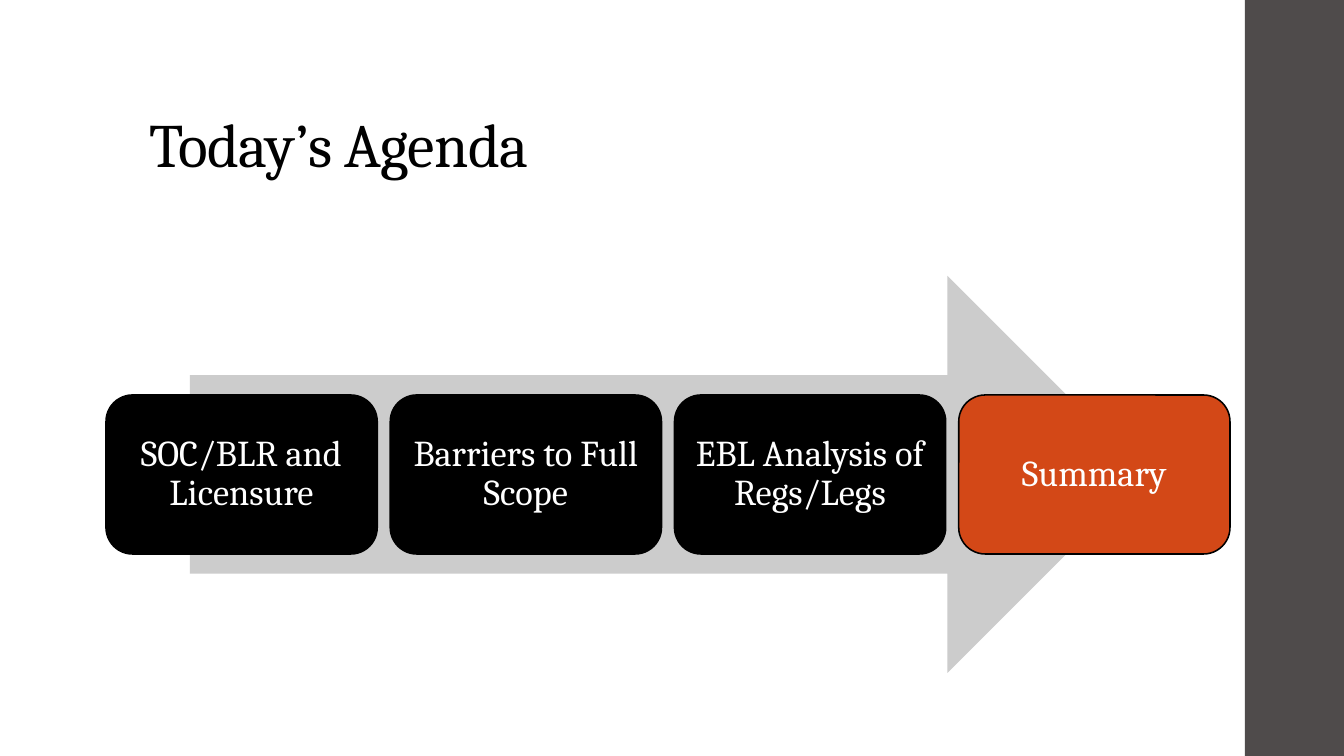
from pptx import Presentation
from pptx.dml.color import RGBColor
from pptx.enum.shapes import MSO_SHAPE
from pptx.enum.text import MSO_ANCHOR, MSO_AUTO_SIZE, PP_ALIGN
from pptx.util import Emu, Pt

RECTANGLE = MSO_SHAPE.RECTANGLE
ROUNDED = MSO_SHAPE.ROUNDED_RECTANGLE
ARROW = MSO_SHAPE.RIGHT_ARROW
MIDDLE = MSO_ANCHOR.MIDDLE
BOTTOM = MSO_ANCHOR.BOTTOM
NO_FIT = MSO_AUTO_SIZE.NONE
CENTER = PP_ALIGN.CENTER
LEFT = PP_ALIGN.LEFT

BLACK = RGBColor(0x00, 0x00, 0x00)
WHITE = RGBColor(0xFF, 0xFF, 0xFF)
GRAY = RGBColor(0xCC, 0xCC, 0xCC)
CHARCOAL = RGBColor(0x4F, 0x4B, 0x4B)
ORANGE = RGBColor(0xD3, 0x48, 0x17)

FONT = "Cambria"
SLIDE_WIDTH, SLIDE_HEIGHT = 1344, 756
EMU_PER_PX = 12192000 / SLIDE_WIDTH

STEPS = [
    ("SOC/BLR and Licensure", BLACK),
    ("Barriers to Full Scope", BLACK),
    ("EBL Analysis of Regs/Legs", BLACK),
    ("Summary", ORANGE),
]


def px(length):
    return Emu(round(length * EMU_PER_PX))


def set_values(target, values):
    for name, value in values.items():
        setattr(target, name, value)


def add_filled_shape(page, kind, box, color, outline=None):
    shape = page.shapes.add_shape(kind, *map(px, box))
    shape.shadow.inherit = False
    shape.fill.solid()
    shape.fill.fore_color.rgb = color
    if outline is None:
        shape.line.fill.background()
    else:
        shape.line.color.rgb = outline
        shape.line.width = Pt(1.1)
    return shape


def write_text(shape, text, color, frame_values, para_values, font_values):
    frame = shape.text_frame
    set_values(frame, {"word_wrap": True, "auto_size": NO_FIT, **frame_values})
    para = frame.paragraphs[0]
    set_values(para, {"line_spacing": 0.9, **para_values})
    span = para.add_run()
    span.text = text
    set_values(span.font, {"name": FONT, **font_values})
    span.font.color.rgb = color
    return span


def add_title(page, box, text):
    title = page.shapes.title
    set_values(title, dict(zip(("left", "top", "width", "height"), map(px, box))))
    span = write_text(title, text, BLACK, {"vertical_anchor": BOTTOM},
                      {"alignment": LEFT}, {"size": Pt(44)})
    span.font._element.set("spc", "-50")


def add_process(page, box, steps):
    left, top, width, height = box
    arrow_inset, gap, step_height = 84, 13, 159
    arrow_box = (left + arrow_inset, top, width - 2 * arrow_inset, height)
    add_filled_shape(page, ARROW, arrow_box, GRAY)

    step_width = (width - gap * (len(steps) - 1)) / len(steps)
    step_top = top + (height - step_height) / 2
    margins = {f"margin_{side}": px(11) for side in ("left", "top", "right", "bottom")}
    for index, (label, color) in enumerate(steps):
        step_left = left + index * (step_width + gap)
        step = add_filled_shape(page, ROUNDED, (step_left, step_top, step_width, step_height),
                                color, BLACK)
        write_text(step, label, WHITE, {"vertical_anchor": MIDDLE, **margins},
                   {"alignment": CENTER}, {"size": Pt(26)})


def build_agenda(deck):
    page = deck.slides.add_slide(deck.slide_layouts[5])
    add_filled_shape(page, RECTANGLE, (1245, 0, 99, SLIDE_HEIGHT), CHARCOAL)
    add_title(page, (139, 40, 1068, 146), "Today’s Agenda")
    add_process(page, (106, 276, 1124, 397), STEPS)


def main():
    deck = Presentation()
    deck.slide_width, deck.slide_height = px(SLIDE_WIDTH), px(SLIDE_HEIGHT)
    build_agenda(deck)
    deck.save("out.pptx")


if __name__ == "__main__":
    main()
